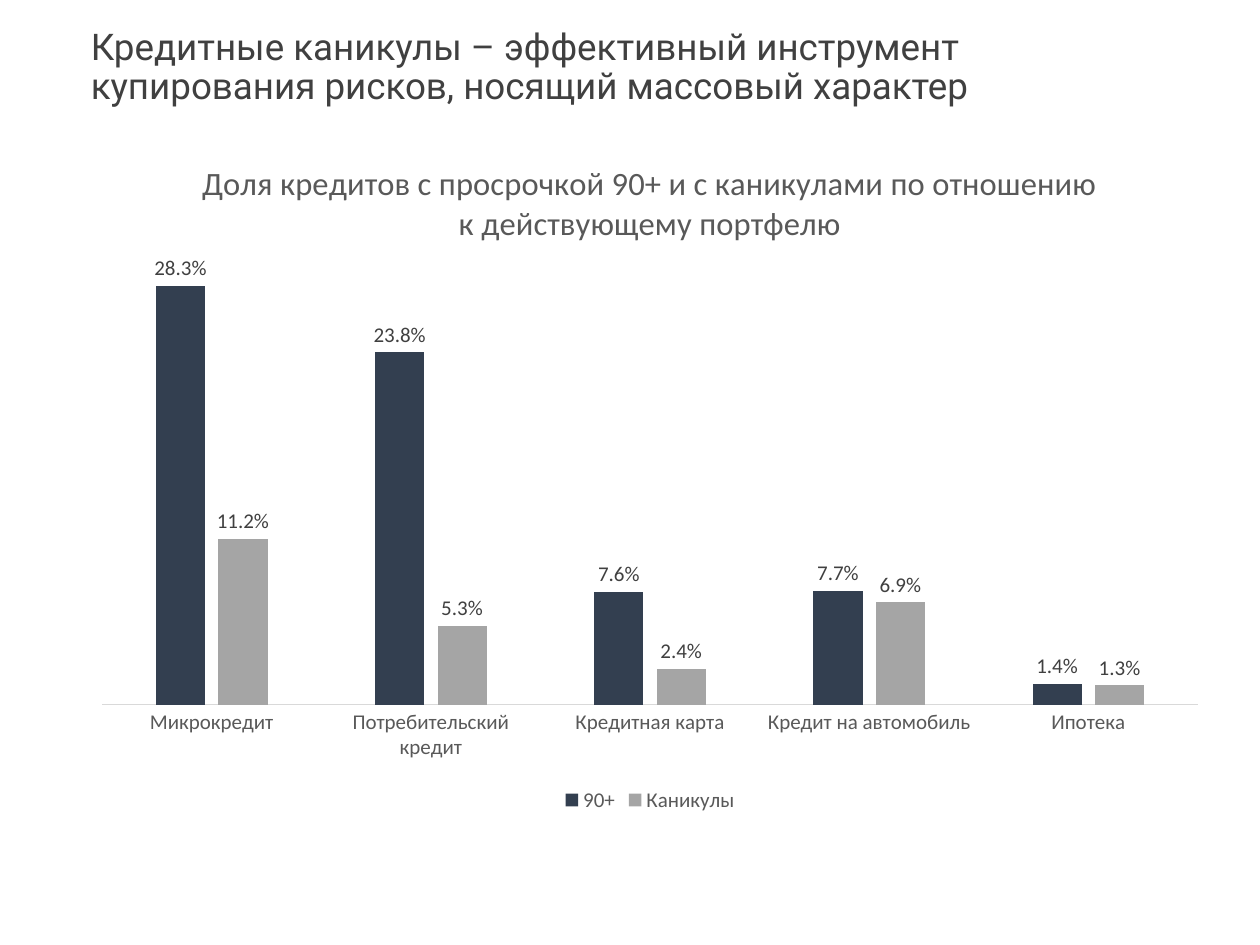
from lxml import etree
from pptx import Presentation
from pptx.chart import data
from pptx.dml.color import RGBColor
from pptx.enum import chart as kinds, text
from pptx.oxml import ns
from pptx.util import Cm, Pt

HUES = {"title": "404040", "text": "595959", "label": "404040",
        "axis": "D9D9D9", "late": "333F50", "break": "A5A5A5"}
KINDS = ("Микрокредит", "Потребительский кредит", "Кредитная карта",
         "Кредит на автомобиль", "Ипотека")
SERIES = (("90+", "late", (0.283, 0.238, 0.076, 0.077, 0.014)),
          ("Каникулы", "break", (0.112, 0.053, 0.024, 0.069, 0.013)))
AREA = {"x": 0.02, "y": 0.186, "w": 0.96, "h": 0.649}


def hue(name):
    """Return a named colour."""
    return RGBColor.from_string(HUES[name])


def style(font, size, name, face="Calibri"):
    """Set the face, size and colour of a font."""
    font.name, font.size, font.bold = face, Pt(size), False
    font.color.rgb = hue(name)


def add_title(slide, words):
    """Place and format the slide title."""
    box = slide.shapes.title
    box.left, box.top, box.width, box.height = Cm(1.6), Cm(0.46), Cm(20.55), Cm(2.26)
    frame = box.text_frame
    frame.text = words
    frame.word_wrap = True
    frame.auto_size = text.MSO_AUTO_SIZE.NONE
    frame.vertical_anchor = text.MSO_ANCHOR.TOP
    frame.margin_left = frame.margin_right = Cm(0.23)
    frame.margin_top = frame.margin_bottom = Cm(0.11)
    line = frame.paragraphs[0]
    line.alignment = text.PP_ALIGN.LEFT
    line.line_spacing = 0.9
    style(line.font, 21, "title", "Roboto")


def set_area(chart):
    """Fix the inner plot area as fractions of the chart."""
    area = chart._chartSpace.chart.plotArea
    for old in area.findall(ns.qn("c:layout")):
        area.remove(old)
    layout = etree.Element(ns.qn("c:layout"))
    area.insert(0, layout)
    manual = etree.SubElement(layout, ns.qn("c:manualLayout"))
    rules = {"layoutTarget": "inner", "xMode": "edge", "yMode": "edge", **AREA}
    for key, val in rules.items():
        etree.SubElement(manual, ns.qn(f"c:{key}")).set("val", str(val))


def set_axes(chart):
    """Show a plain category axis and hide the value axis."""
    cats, vals = chart.category_axis, chart.value_axis
    cats.major_tick_mark = cats.minor_tick_mark = kinds.XL_TICK_MARK.NONE
    cats.format.line.color.rgb = hue("axis")
    cats.format.line.width = Pt(0.75)
    style(cats.tick_labels.font, 12, "text")
    vals.has_major_gridlines = False
    vals.minimum_scale, vals.maximum_scale = 0, 0.3
    vals.visible = False


def set_bars(plot):
    """Colour and label the bars."""
    plot.gap_width, plot.overlap = 219, -27
    plot.vary_by_categories = False
    for bars, (_, name, _) in zip(plot.series, SERIES):
        bars.format.fill.solid()
        bars.format.fill.fore_color.rgb = hue(name)
        labels = bars.data_labels
        labels.show_value = True
        labels.number_format = "0.0%"
        labels.number_format_is_linked = False
        labels.position = kinds.XL_LABEL_POSITION.OUTSIDE_END
        style(labels.font, 12, "label")


def add_bars(slide, words):
    """Add the clustered column chart."""
    book = data.CategoryChartData(number_format="0.0%")
    book.categories = KINDS
    for name, _, vals in SERIES:
        book.add_series(name, vals)
    chart = slide.shapes.add_chart(
        kinds.XL_CHART_TYPE.COLUMN_CLUSTERED,
        Cm(1.6), Cm(2.69), Cm(23.01), Cm(13.79), book).chart
    style(chart.font, 10, "text")
    chart.has_title = True
    head = chart.chart_title
    head.include_in_layout = False
    head.text_frame.text = words
    style(head.text_frame.paragraphs[0].font, 18.6, "text")
    chart.has_legend = True
    chart.legend.position = kinds.XL_LEGEND_POSITION.BOTTOM
    chart.legend.include_in_layout = False
    style(chart.legend.font, 12, "text")
    set_axes(chart)
    set_bars(chart.plots[0])
    set_area(chart)


def main():
    """Build and save the slide."""
    deck = Presentation()
    deck.slide_width, deck.slide_height = Cm(25.4), Cm(19.05)
    slide = deck.slides.add_slide(deck.slide_layouts[5])
    add_title(slide, "Кредитные каникулы – эффективный инструмент "
                     "купирования рисков, носящий массовый характер")
    add_bars(slide, "Доля кредитов с просрочкой 90+ и с каникулами "
                    "по отношению к действующему портфелю")
    deck.save("out.pptx")


if __name__ == "__main__":
    main()
